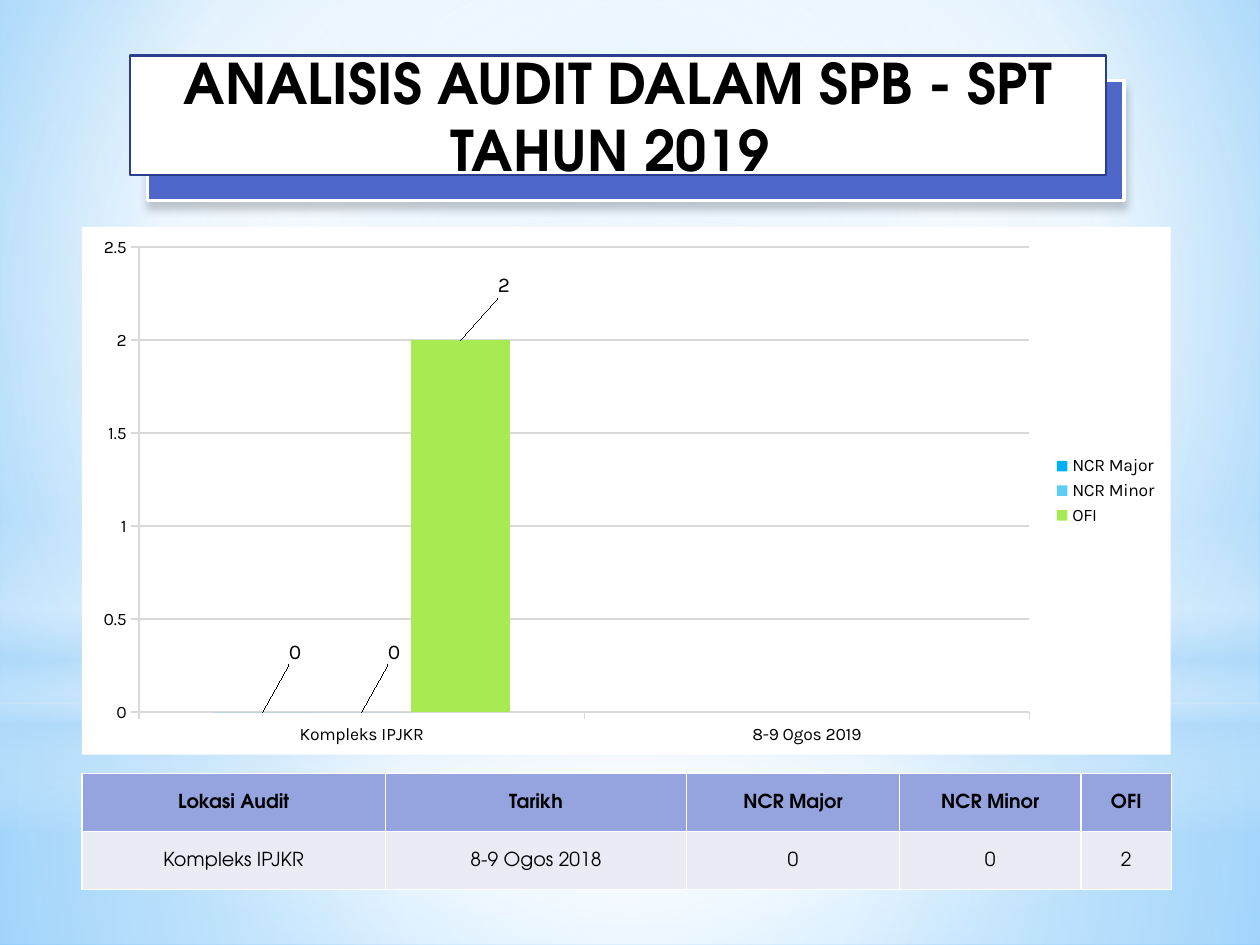
from lxml.etree import SubElement
from pptx import Presentation
from pptx.chart.data import CategoryChartData
from pptx.dml.color import RGBColor
from pptx.enum.chart import (XL_CHART_TYPE, XL_LABEL_POSITION,
                             XL_LEGEND_POSITION, XL_TICK_MARK)
from pptx.enum.shapes import MSO_SHAPE
from pptx.enum.text import MSO_ANCHOR, PP_ALIGN
from pptx.oxml import parse_xml
from pptx.oxml.ns import nsdecls, qn
from pptx.util import Inches, Pt

WIDTH, HEIGHT = Inches(10), Inches(7.5)
TITLE_FONT, CHART_FONT = "TeX Gyre Adventor", "Karla"

BLACK = RGBColor(0x00, 0x00, 0x00)
WHITE = RGBColor(0xFF, 0xFF, 0xFF)
GRID_GREY = RGBColor(0xD9, 0xD9, 0xD9)
SKY = RGBColor(0x9E, 0xD5, 0xFF)
DEEP_SKY = RGBColor(0x5B, 0xB9, 0xFF)
MIST = RGBColor(0xB4, 0xDC, 0xFA)
INDIGO = RGBColor(0x4E, 0x67, 0xC8)
NAVY = RGBColor(0x2A, 0x3E, 0x8E)
HEADER_FILL = RGBColor(0x95, 0xA4, 0xDE)
ROW_FILL = RGBColor(0xE9, 0xEB, 0xF5)
CYAN = RGBColor(0x00, 0xB0, 0xF0)
LIGHT_CYAN = RGBColor(0x5E, 0xCC, 0xF3)
LIME = RGBColor(0xA7, 0xEA, 0x52)

CENTRE = (50, 50, 50, 50)
# Haze layers: preset, box, gradient stops (position, colour, opacity), focus
HAZE = [
    (MSO_SHAPE.RECTANGLE, (0, 74.4, 100, 25.6),
     [(0, WHITE, 91), (37, WHITE, 76), (100, MIST, 79)], CENTRE),
    (MSO_SHAPE.RECTANGLE, (0, 0, 100, 74.4),
     [(0, WHITE, 89), (48, WHITE, 62), (100, MIST, 79)], CENTRE),
    (MSO_SHAPE.RECTANGLE, (0, 54.93, 100, 33.33),
     [(0, WHITE, 0), (29, WHITE, 30), (45, MIST, 40),
      (55, WHITE, 26), (65, MIST, 60), (100, WHITE, 0)], None),
    (MSO_SHAPE.OVAL, (0, 23.33, 100, 74.4),
     [(0, WHITE, 100), (56, WHITE, 0)], CENTRE),
]
# Series: name, value, colour, label offset as shares of the chart
FINDINGS = [
    ("NCR Major", 0, CYAN, (0.03, -0.08)),
    ("NCR Minor", 0, LIGHT_CYAN, (0.03, -0.08)),
    ("OFI", 2, LIME, (0.04, -0.07)),
]
AUDIT_ROWS = [
    ["Lokasi Audit", "Tarikh", "NCR Major", "NCR Minor", "OFI"],
    ["Kompleks IPJKR", "8-9 Ogos 2018", "0", "0", "2"],
]
COLUMN_SHARES = [24.1, 23.9, 16.9, 14.4, 7.2]


def box(left, top, width, height):
    """Turn percentages of the slide into lengths."""
    return (int(WIDTH * left / 100), int(HEIGHT * top / 100),
            int(WIDTH * width / 100), int(HEIGHT * height / 100))


def style_font(font, size, name, bold=False):
    font.size, font.name, font.bold = Pt(size), name, bold
    font.color.rgb = BLACK


def paint_gradient(fill, holder, stops, focus):
    """Focus gives a radial gradient; None gives a vertical one."""
    fill.solid()
    stop_xml = "".join(
        f'<a:gs pos="{pos * 1000}"><a:srgbClr val="{colour}">'
        f'<a:alpha val="{opacity * 1000}"/></a:srgbClr></a:gs>'
        for pos, colour, opacity in stops)
    if focus:
        sides = " ".join(f'{side}="{share * 1000}"' for side, share in zip("ltrb", focus))
        direction = f'<a:path path="circle"><a:fillToRect {sides}/></a:path>'
    else:
        direction = '<a:lin ang="5400000" scaled="0"/>'
    gradient = parse_xml(f'<a:gradFill {nsdecls("a")} rotWithShape="1">'
                         f'<a:gsLst>{stop_xml}</a:gsLst>{direction}</a:gradFill>')
    holder.replace(holder.find(qn("a:solidFill")), gradient)


def add_backdrop(slide):
    background = slide.background.fill
    background.solid()
    paint_gradient(background, slide.element.find(".//" + qn("p:bgPr")),
                   [(0, SKY, 100), (60, WHITE, 100), (100, DEEP_SKY, 100)],
                   (20, 10, 20, 60))
    for preset, place, stops, focus in HAZE:
        haze = slide.shapes.add_shape(preset, *box(*place))
        haze.shadow.inherit = False
        haze.line.fill.background()
        paint_gradient(haze.fill, haze.element.spPr, stops, focus)


def add_panel(group, place, fill, line, line_width):
    panel = group.shapes.add_shape(MSO_SHAPE.RECTANGLE, *box(*place))
    panel.shadow.inherit = False
    panel.fill.solid()
    panel.fill.fore_color.rgb = fill
    panel.line.color.rgb = line
    panel.line.width = Pt(line_width)
    return panel


def add_title(slide, title):
    group = slide.shapes.add_group_shape()
    back = add_panel(group, (11.7, 8.53, 77.5, 12.67), INDIGO, WHITE, 2)
    back.element.spPr.find(qn("a:effectLst")).append(parse_xml(
        f'<a:outerShdw {nsdecls("a")} blurRad="{Pt(5)}" dist="{Pt(4)}" dir="5400000">'
        f'<a:srgbClr val="{BLACK}"><a:alpha val="20000"/></a:srgbClr></a:outerShdw>'))
    front = add_panel(group, (10.3, 5.87, 77.5, 12.67), WHITE, NAVY, 1.25)
    frame = front.text_frame
    frame.word_wrap = True
    frame.vertical_anchor = MSO_ANCHOR.MIDDLE
    heading = frame.paragraphs[0]
    heading.text = title
    heading.alignment = PP_ALIGN.CENTER
    for run in heading.runs:
        style_font(run.font, 32, TITLE_FONT, bold=True)


def style_axis(axis):
    axis.major_tick_mark = XL_TICK_MARK.OUTSIDE
    axis.format.line.color.rgb = GRID_GREY
    axis.format.line.width = Pt(0.75)


def label_bar(series, offset):
    label = series.points[0].data_label
    style_font(label.font, 12, CHART_FONT)
    label.position = XL_LABEL_POSITION.OUTSIDE_END
    x, y = offset
    series._element.find(".//" + qn("c:dLbl")).find(qn("c:idx")).addnext(parse_xml(
        f'<c:layout {nsdecls("c")}><c:manualLayout>'
        f'<c:x val="{x}"/><c:y val="{y}"/></c:manualLayout></c:layout>'))


def add_findings_chart(slide):
    data = CategoryChartData()
    data.categories = ["Kompleks IPJKR", "8-9 Ogos 2019"]
    for name, value, _, _ in FINDINGS:
        data.add_series(name, [value])
    chart = slide.shapes.add_chart(XL_CHART_TYPE.COLUMN_CLUSTERED,
                                   *box(6.5, 24, 86.4, 55.87), data).chart
    style_font(chart.font, 10, CHART_FONT)
    chart.has_title = False
    chart.has_legend = True
    chart.legend.position = XL_LEGEND_POSITION.RIGHT
    chart.legend.include_in_layout = False

    # White chart area without a border
    chart.element.find(qn("c:chart")).addnext(parse_xml(
        f'<c:spPr {nsdecls("c", "a")}><a:solidFill><a:srgbClr val="{WHITE}"/></a:solidFill>'
        '<a:ln><a:noFill/></a:ln></c:spPr>'))

    counts = chart.value_axis
    for axis in (chart.category_axis, counts):
        style_axis(axis)
    counts.minimum_scale, counts.maximum_scale, counts.major_unit = 0, 2.5, 0.5
    counts.major_gridlines.format.line.color.rgb = GRID_GREY
    counts.major_gridlines.format.line.width = Pt(0.75)

    plot = chart.plots[0]
    plot.gap_width, plot.overlap, plot.vary_by_categories = 150, 0, False
    for series, (_, _, colour, offset) in zip(plot.series, FINDINGS):
        series.format.fill.solid()
        series.format.fill.fore_color.rgb = colour
        label_bar(series, offset)


def fill_cell(cell, text, fill, bold):
    cell.margin_left = cell.margin_right = cell.margin_top = Inches(0.01)
    cell.margin_bottom = 0
    cell.vertical_anchor = MSO_ANCHOR.MIDDLE
    cell.text_frame.text = text
    entry = cell.text_frame.paragraphs[0]
    entry.alignment = PP_ALIGN.CENTER
    style_font(entry.runs[0].font, 11, TITLE_FONT, bold)
    properties = cell._tc.get_or_add_tcPr()
    for side in "LRTB":
        border = SubElement(properties, qn(f"a:ln{side}"), w=str(Pt(1)))
        SubElement(SubElement(border, qn("a:solidFill")), qn("a:srgbClr"), val=str(WHITE))
    cell.fill.solid()
    cell.fill.fore_color.rgb = fill


def add_audit_table(slide):
    table = slide.shapes.add_table(len(AUDIT_ROWS), len(COLUMN_SHARES),
                                   *box(6.5, 81.87, 86.5, 12.27)).table
    for column, share in zip(table.columns, COLUMN_SHARES):
        column.width = int(WIDTH * share / 100)
    for r, row in enumerate(AUDIT_ROWS):
        for c, text in enumerate(row):
            fill_cell(table.cell(r, c), text, ROW_FILL if r else HEADER_FILL, r == 0)


def main():
    deck = Presentation()
    deck.slide_width, deck.slide_height = WIDTH, HEIGHT
    slide = deck.slides.add_slide(deck.slide_layouts[6])
    add_backdrop(slide)
    add_findings_chart(slide)
    add_audit_table(slide)
    add_title(slide, "ANALISIS AUDIT DALAM SPB - SPT\vTAHUN 2019 ")
    deck.save("out.pptx")


if __name__ == "__main__":
    main()
